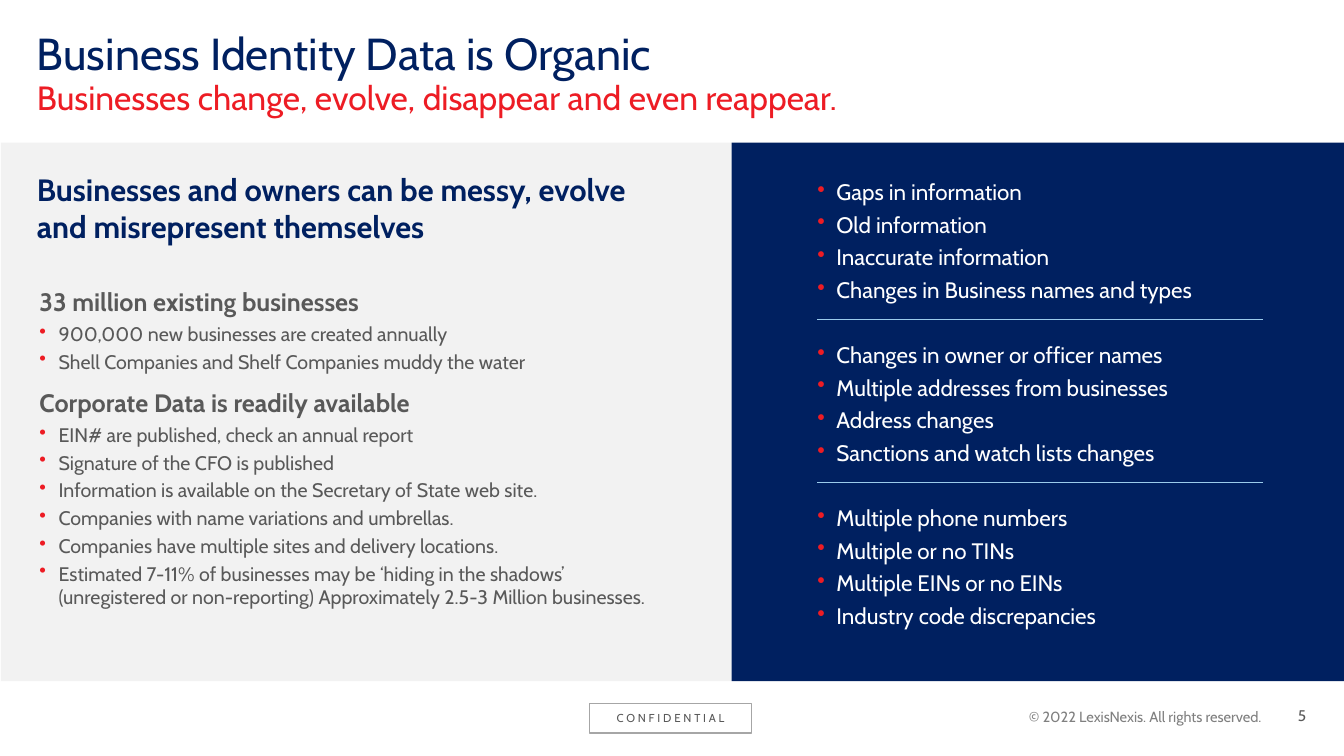
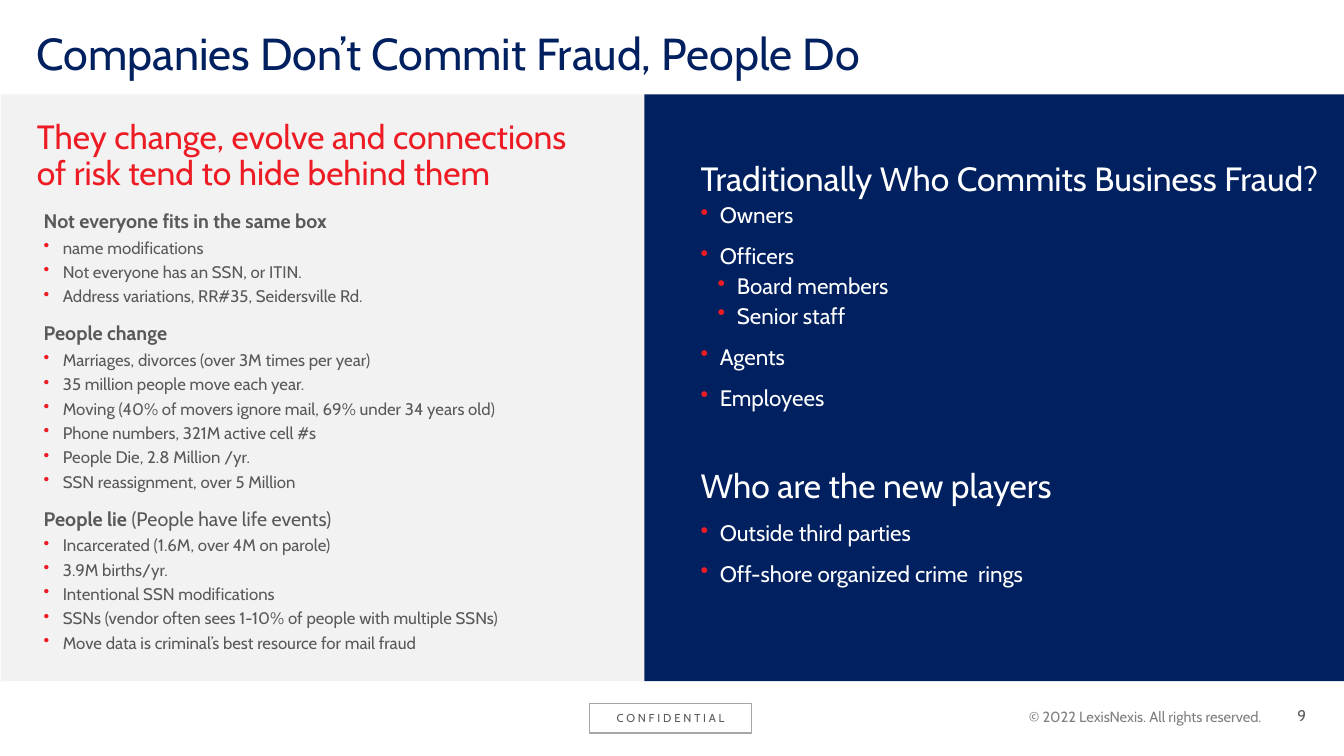
"""Build two slides on business identity data and fraud."""
from lxml import etree
from pptx import Presentation
from pptx.dml.color import RGBColor
from pptx.enum.shapes import MSO_CONNECTOR, MSO_SHAPE
from pptx.enum.text import MSO_ANCHOR, PP_ALIGN
from pptx.oxml.ns import qn
from pptx.util import Inches, Pt

RECT = MSO_SHAPE.RECTANGLE
LINE = MSO_CONNECTOR.STRAIGHT
TOP, MID = MSO_ANCHOR.TOP, MSO_ANCHOR.MIDDLE
LEFT, MIDST, RIGHT = PP_ALIGN.LEFT, PP_ALIGN.CENTER, PP_ALIGN.RIGHT

NAVY = RGBColor(0x00, 0x20, 0x60)
RED = RGBColor(0xED, 0x1C, 0x24)
WHITE = RGBColor(0xFF, 0xFF, 0xFF)
PALE = RGBColor(0xF2, 0xF2, 0xF2)
SKY = RGBColor(0x9B, 0xCB, 0xEB)
DARK = RGBColor(0x59, 0x59, 0x59)
GREY = RGBColor(0x80, 0x80, 0x80)
EDGE = RGBColor(0xA6, 0xA6, 0xA6)

FONT = "Cabin"
WIDE, HIGH = Inches(13.33), Inches(7.5)
COLS, ROWS = 160, 90
BASE = 81.1
HANG = 0.19


def style(size, color, bold=False, dent=None, track=None, **para):
    """Gather the format values of one kind of paragraph."""
    font = {"name": FONT, "size": Pt(size), "bold": bold}
    return {"font": font, "color": color, "dent": dent, "track": track, "para": para}


TITLE = style(32, NAVY, line_spacing=0.9)
SUB = style(24, RED, line_spacing=0.9)
LEAD = style(22, NAVY, True)
MARK = style(8.2, DARK, track=2, alignment=MIDST)
RIGHTS = style(10.5, GREY, alignment=RIGHT)
PAGE = style(11, DARK, alignment=RIGHT)
GAP = style(16, WHITE, dent=HANG, line_spacing=0.9, space_after=Pt(6))
ASK = style(24, WHITE, line_spacing=0.95)
NEXT = style(24, WHITE, line_spacing=0.9, space_before=Pt(41.5))
NEAR = style(16, WHITE, dent=HANG, line_spacing=0.9, space_before=Pt(4))
ROLE = style(16, WHITE, dent=HANG, line_spacing=0.9, space_before=Pt(12))
RANK = style(16, WHITE, dent=0.36, line_spacing=0.9, space_before=Pt(4))

FACTS = [
    ("33 million existing businesses", [
        "900,000 new businesses are created annually",
        "Shell Companies and Shelf Companies muddy the water"]),
    ("Corporate Data is readily available", [
        "EIN# are published, check an annual report",
        "Signature of the CFO is published",
        "Information is available on the Secretary of State web site.",
        "Companies with name variations and umbrellas.",
        "Companies have multiple sites and delivery locations.",
        "Estimated 7-11% of businesses may be ‘hiding in the shadows’\v"
        "(unregistered or non-reporting) Approximately 2.5-3 Million businesses."]),
]
GAPS = [
    ["Gaps in information", "Old information", "Inaccurate information",
     "Changes in Business names and types"],
    ["Changes in owner or officer names", "Multiple addresses from businesses",
     "Address changes", "Sanctions and watch lists changes"],
    ["Multiple phone numbers", "Multiple or no TINs", "Multiple EINs or no EINs",
     "Industry code discrepancies"],
]
PEOPLE = [
    ("Not everyone fits in the same box", [
        "name modifications",
        "Not everyone has an SSN, or ITIN.",
        "Address variations, RR#35, Seidersville Rd."]),
    ("People change", [
        "Marriages, divorces (over 3M times per year)",
        "35 million people move each year.",
        "Moving (40% of movers ignore mail, 69% under 34 years old)",
        "Phone numbers, 321M active cell #s",
        "People Die, 2.8 Million /yr.",
        "SSN reassignment, over 5 Million"]),
    ("People lie |(People have life events)", [
        "Incarcerated (1.6M, over 4M on parole)",
        "3.9M births/yr.",
        "Intentional SSN modifications",
        "SSNs (vendor often sees 1-10% of people with multiple SSNs)",
        "Move data is criminal’s best resource for mail fraud"]),
]
FRAUD = [
    (ASK, "Traditionally Who Commits Business Fraud?"),
    (NEAR, "Owners"),
    (ROLE, "Officers"),
    (RANK, "Board members"),
    (RANK, "Senior staff"),
    (ROLE, "Agents"),
    (ROLE, "Employees"),
    (NEXT, "Who are the new players"),
    (ROLE, "Outside third parties"),
    (ROLE, "Off-shore organized crime  rings"),
]


def apply(item, values):
    """Set each named value on the item."""
    for name, value in values.items():
        setattr(item, name, value)


def place(box, x, y, w, h):
    """Turn grid cells within a box into slide lengths."""
    col, row = WIDE / COLS, HIGH / ROWS
    return [int(v) for v in ((box[0] + x) * col, (box[1] + y) * row, w * col, h * row)]


def dot(para, dent):
    """Give a paragraph a red bullet and a hanging indent."""
    props = para._p.get_or_add_pPr()
    props.set("marL", str(Inches(dent)))
    props.set("indent", str(-Inches(HANG)))
    tint = etree.SubElement(props, qn("a:buClr"))
    etree.SubElement(tint, qn("a:srgbClr")).set("val", str(RED))
    etree.SubElement(props, qn("a:buChar")).set("char", "•")


def fill(shape, items, anchor=TOP):
    """Write styled paragraphs into a shape; a bar ends the bold part."""
    frame = shape.text_frame
    apply(frame, {"word_wrap": True, "vertical_anchor": anchor, "margin_left": 0,
                  "margin_right": 0, "margin_top": 0, "margin_bottom": 0})
    for i, (look, text) in enumerate(items):
        para = frame.add_paragraph() if i else frame.paragraphs[0]
        apply(para, {"alignment": LEFT, **look["para"]})
        if not i:
            para.space_before = Pt(0)
        if look["dent"]:
            dot(para, look["dent"])
        main, _, tail = text.partition("|")
        para.text = main
        if tail:
            para.add_run().text = tail
        for j, run in enumerate(para.runs):
            apply(run.font, look["font"])
            run.font.color.rgb = look["color"]
            if tail and j:
                run.font.bold = False
            if look["track"]:
                run._r.get_or_add_rPr().set("spc", str(look["track"] * 100))


def write(slide, spot, items, anchor=TOP):
    """Add a text box at the spot."""
    fill(slide.shapes.add_textbox(*spot), items, anchor)


def block(slide, spot, color=None):
    """Add a plain rectangle, outlined when it has no colour."""
    shape = slide.shapes.add_shape(RECT, *spot)
    shape.shadow.inherit = False
    if color is None:
        shape.fill.background()
        shape.line.color.rgb = EDGE
        shape.line.width = Pt(1)
    else:
        shape.fill.solid()
        shape.fill.fore_color.rgb = color
        shape.line.fill.background()
    return shape


def rule(slide, box, x, y, w):
    """Draw a thin level line within a box."""
    left, top, wide, _ = place(box, x, y, w, 0)
    line = slide.shapes.add_connector(LINE, left, top, left + wide, top)
    line.line.color.rgb = SKY
    line.line.width = Pt(0.5)
    etree.SubElement(line._element.spPr, qn("a:effectLst"))


def foot(slide, box, page):
    """Place the label, rights line and page number."""
    fill(block(slide, place(box, 70.2, 2.66, 19.3, 3.5)), [(MARK, "CONFIDENTIAL")], MID)
    write(slide, place(box, 90.7, 1.8, 59.5, 4.8),
          [(RIGHTS, "© 2022 LexisNexis. All rights reserved.")], MID)
    write(slide, place(box, 150.2, 1.7, 5.3, 4.8), [(PAGE, str(page))], MID)


def panels(slide, top, split):
    """Fill the body with a pale and a navy panel and return both boxes."""
    pale = (0.1, top, split - 0.1, BASE - top)
    navy = (split, top, COLS - split, BASE - top)
    for box, color in ((pale, PALE), (navy, NAVY)):
        block(slide, place((0, 0), *box), color)
    return pale, navy


def start(deck, title, page, top, split):
    """Add a slide with title, panels and footer."""
    slide = deck.slides.add_slide(deck.slide_layouts[6])
    write(slide, place((0, 0), 4.4, 3.8, 151, 6.2), [(TITLE, title)])
    foot(slide, (0, BASE), page)
    return slide, *panels(slide, top, split)


def topics(slide, spot, groups, big, small):
    """List bold topics, each with its bullets."""
    head = style(big, DARK, True, line_spacing=0.95, space_before=Pt(12))
    note = style(small, DARK, dent=HANG, space_before=Pt(3))
    items = []
    for name, notes in groups:
        items += [(head, name)] + [(note, text) for text in notes]
    write(slide, spot, items)


def gaps(slide, box):
    """Stack the bullet groups with a line between them."""
    x, y, step, wide = 10.2, 4.6, 19.4, 53
    for i, group in enumerate(GAPS):
        top = y + i * step
        write(slide, place(box, x, top, wide, 16.1), [(GAP, text) for text in group])
        if i:
            rule(slide, box, x, top - 3, wide)


def data(deck):
    """Build the slide on business identity data."""
    slide, pale, navy = start(deck, "Business Identity Data is Organic", 5, 17, 87.1)
    write(slide, place((0, 0), 4.4, 9.7, 151, 4.8),
          [(SUB, "Businesses change, evolve, disappear and even reappear.")])
    write(slide, place(pale, 4.3, 3.3, 70.8, 8.9),
          [(LEAD, "Businesses and owners can be messy, evolve and misrepresent themselves")])
    topics(slide, place(pale, 4.6, 17.4, 78, 41.5), FACTS, 18, 14)
    gaps(slide, navy)


def fraud(deck):
    """Build the slide on who commits fraud."""
    slide, pale, navy = start(deck, "Companies Don’t Commit Fraud, People Do", 9, 11.25, 76.7)
    write(slide, place(pale, 4.3, 3.05, 63.4, 7.8),
          [(SUB, "They change, evolve and connections of risk tend to hide behind them")])
    topics(slide, place(pale, 5.1, 13.85, 68.3, 53.4), PEOPLE, 14, 12)
    write(slide, place(navy, 6.7, 7.85, 75.2, 59), FRAUD)


def main():
    """Build and save the deck."""
    deck = Presentation()
    apply(deck, {"slide_width": WIDE, "slide_height": HIGH})
    data(deck)
    fraud(deck)
    deck.save("out.pptx")


if __name__ == "__main__":
    main()
